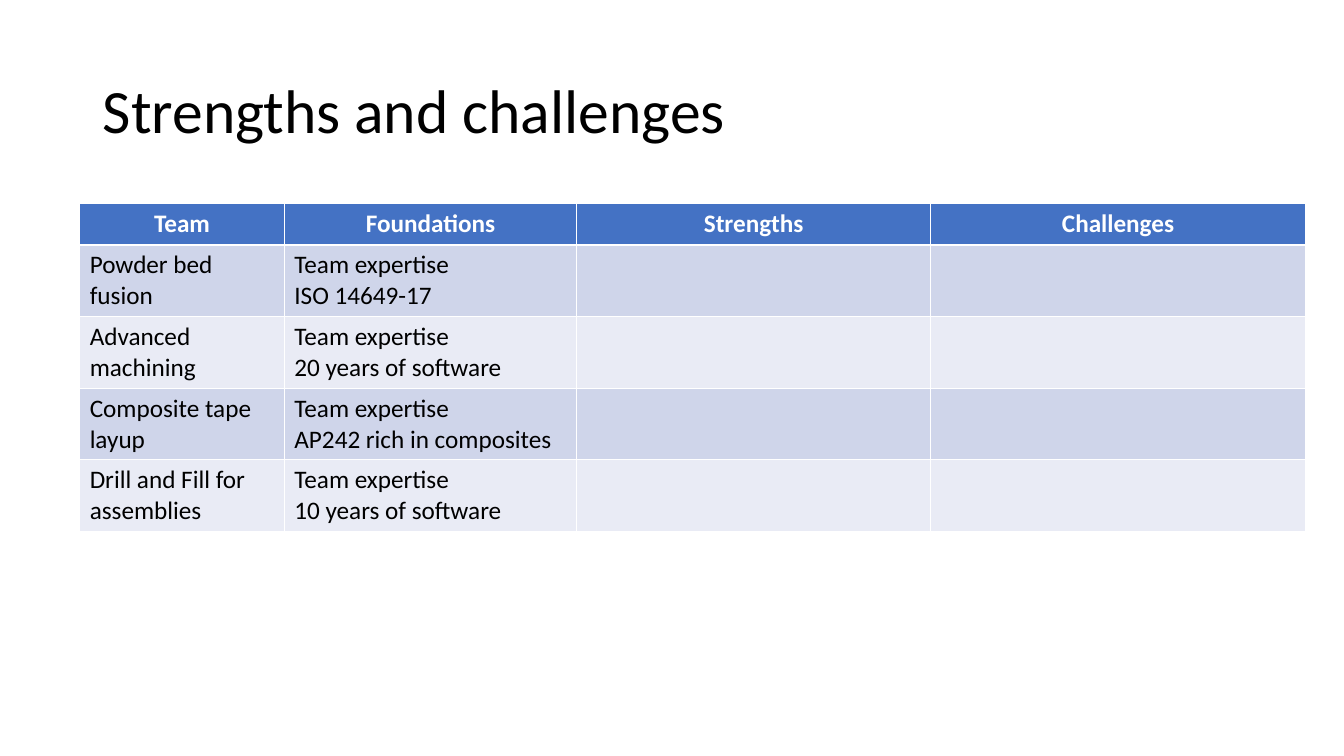
from pptx import Presentation
from pptx.dml.color import RGBColor
from pptx.enum.text import MSO_ANCHOR, PP_ALIGN
from pptx.util import Inches, Pt

TITLE = "Strengths and challenges"
HEADERS = ["Team", "Foundations", "Strengths", "Challenges"]
EXPERTISE = "Team expertise"
TEAMS = [
    ("Powder bed fusion", "ISO 14649-17"),
    ("Advanced machining", "20 years of software"),
    ("Composite tape layup", "AP242 rich in composites"),
    ("Drill and Fill for assemblies", "10 years of software"),
]
COLUMN_WIDTHS = [2.03, 2.9, 3.51, 3.72]
ROW_HEIGHT = 0.41  # minimum; rows grow with their text
FONT = "Calibri"
COLORS = {
    "header": "4472C4",
    "odd": "CFD5EA",
    "even": "E9EBF5",
    "light": "FFFFFF",
    "dark": "000000",
}


def rgb(name):
    return RGBColor.from_string(COLORS[name])


def style_paragraph(p, size, color, bold=False, align=PP_ALIGN.LEFT):
    p.alignment = align
    p.font.color.rgb = rgb(color)
    for key, value in {"name": FONT, "size": Pt(size), "bold": bold}.items():
        setattr(p.font, key, value)


def fill_cell(cell, text, fill, **style):
    cell.fill.solid()
    cell.fill.fore_color.rgb = rgb(fill)
    cell.text = text
    for p in cell.text_frame.paragraphs:
        style_paragraph(p, 18, **style)


def add_title(s):
    title = s.shapes.title
    title.left, title.top = Inches(0.92), Inches(0.4)
    title.width, title.height = Inches(11.5), Inches(1.45)
    tf = title.text_frame
    tf.text = TITLE
    tf.vertical_anchor = MSO_ANCHOR.MIDDLE
    p = tf.paragraphs[0]
    p.line_spacing = 0.9
    style_paragraph(p, 44, "dark")


def add_team_table(s):
    rows = [HEADERS] + [[team, f"{EXPERTISE}\n{basis}", "", ""] for team, basis in TEAMS]
    table = s.shapes.add_table(
        len(rows), len(HEADERS), Inches(0.79), Inches(2.02),
        Inches(sum(COLUMN_WIDTHS)), Inches(ROW_HEIGHT * len(rows)),
    ).table
    for column, width in zip(table.columns, COLUMN_WIDTHS):
        column.width = Inches(width)
    for i, row in enumerate(rows):
        table.rows[i].height = Inches(ROW_HEIGHT)
        if i == 0:
            fill = "header"
            style = {"color": "light", "bold": True, "align": PP_ALIGN.CENTER}
        else:
            fill = "odd" if i % 2 else "even"
            style = {"color": "dark"}
        for j, text in enumerate(row):
            fill_cell(table.cell(i, j), text, fill, **style)


def main():
    prs = Presentation()
    prs.slide_width, prs.slide_height = Inches(13.33), Inches(7.5)
    s = prs.slides.add_slide(prs.slide_layouts[5])
    add_title(s)
    add_team_table(s)
    prs.save("out.pptx")


if __name__ == "__main__":
    main()
